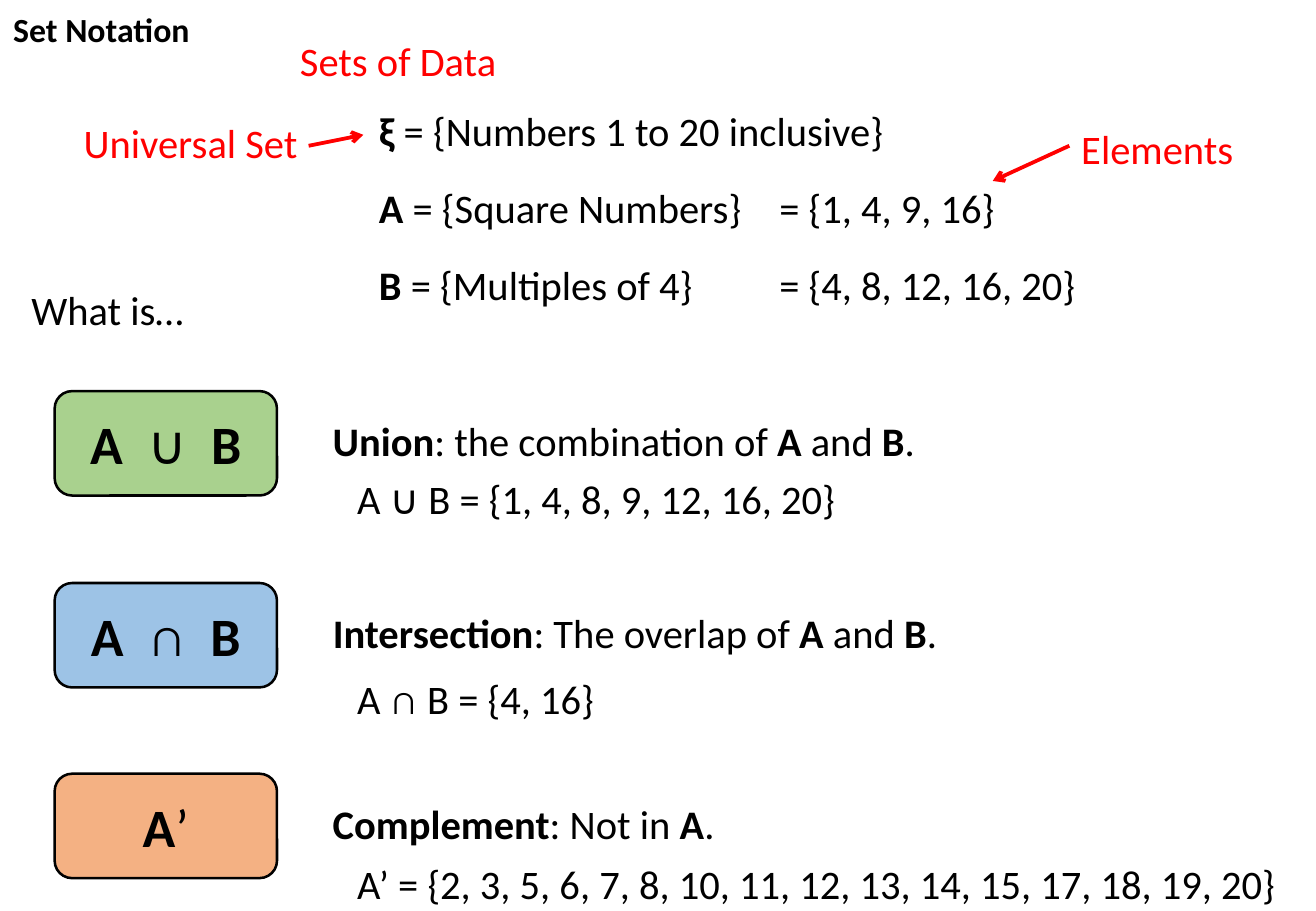
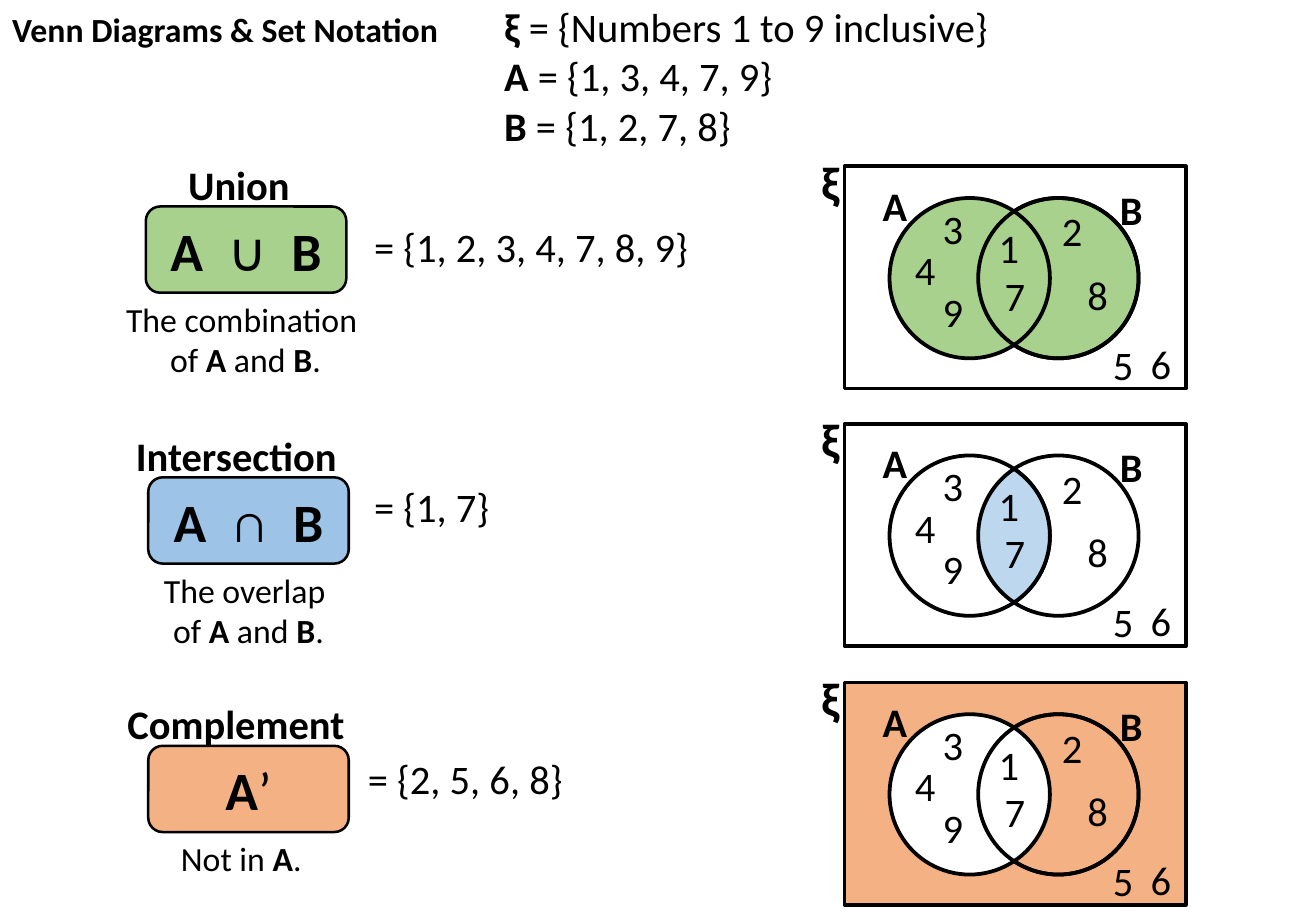
from math import acos, degrees, sqrt

from lxml.etree import SubElement
from pptx import Presentation
from pptx.dml.color import RGBColor
from pptx.enum.shapes import MSO_CONNECTOR, MSO_SHAPE
from pptx.enum.text import MSO_ANCHOR, MSO_AUTO_SIZE, PP_ALIGN
from pptx.oxml.ns import qn
from pptx.util import Inches, Pt

FONT = "Calibri"
COLORS = {
    "text": "000000", "note": "FF0000", "white": "FFFFFF",
    "union": "A9D18E", "intersection": "9DC3E6", "complement": "F4B183",
    "overlap": "BDD7EE",
}

# Content: *stars* enclose bold text
SYMBOLS = {"union": "*A*  ∪  *B*", "intersection": "*A*  ∩  *B*", "complement": "*A*’"}

# Slide 1: (text, left, top, width)
GIVEN_SETS = [
    ("*ξ* = {Numbers 1 to 20 inclusive}", 3.02, 0.82, 4.39),
    ("*A* = {Square Numbers}", 3.02, 1.46, 3.21),
    ("*B* = {Multiples of 4}", 3.02, 2.09, 2.81),
    (" = {1, 4, 9, 16}", 6.24, 1.46, 2.06),
    (" = {4, 8, 12, 16, 20}", 6.24, 2.09, 2.73),
    ("What is…", 0.16, 2.3, 1.47),
]
NOTES = [
    ("Sets of Data", 2.37, 0.25, 1.84),
    ("Universal Set", 0.59, 0.92, 1.98),
    ("Elements", 8.8, 0.97, 1.47),
]
ARROWS = [(2.54, 1.2, 2.99, 1.11), (8.8, 1.2, 8.17, 1.49)]
# (operation, button top, definition and its width, answer with top and width)
DEFINITIONS = [
    ("union", 3.22, "*Union*: the combination of *A* and *B*.", 5.16,
     ("A ∪ B = {1, 4, 8, 9, 12, 16, 20}", 3.85, 5.47)),
    ("intersection", 4.8, "*Intersection*: The overlap of *A* and *B*.", 5.22,
     ("A ∩ B = {4, 16}", 5.5, 5.47)),
    ("complement", 6.37, "*Complement*: Not in *A*.", 3.36,
     ("A’ = {2, 3, 5, 6, 7, 8, 10, 11, 12, 13, 14, 15, 17, 18, 19, 20}", 7.02, 8.08)),
]

# Slide 2: (text, top, width)
VENN_SETS = [
    ("*ξ* = {Numbers 1 to 9 inclusive}", -0.03, 4.22),
    ("*A* = {1, 3, 4, 7, 9}", 0.37, 2.42),
    ("*B* = {1, 2, 7, 8}", 0.78, 2.08),
]
# (operation, button left and top, heading with left and width,
#  caption lines with left, width and alignment, answer with left, top and width)
OPERATIONS = [
    ("union", 1.2, 1.7, ("*Union*", 1.45, 1.14),
     (["The combination ", "of *A* and *B*."], 0.83, 2.38, PP_ALIGN.CENTER),
     ("= {1, 2, 3, 4, 7, 8, 9}", 2.98, 1.78, 3.46)),
    ("intersection", 1.22, 3.93, ("*Intersection*", 1.02, 2.04),
     (["The overlap ", "of *A* and *B*."], 1.17, 1.75, PP_ALIGN.CENTER),
     ("= {1, 7}", 2.98, 3.92, 1.51)),
    ("complement", 1.22, 6.14, ("*Complement*", 0.95, 2.19),
     (["Not in *A*."], 1.39, 1.31, PP_ALIGN.LEFT),
     ("= {2, 5, 6, 8}", 2.93, 6.16, 1.96)),
]
# (top, fill of the box, of circle B, of circle A, of their overlap if it differs from A)
VENNS = [
    (1.37, "white", "union", "union", None),
    (3.49, "white", "white", "white", "overlap"),
    (5.62, "complement", "complement", "white", None),
]
# Offsets from the corner of the diagram's box
ELEMENTS = {
    "1": (1.17, 0.42), "2": (1.69, 0.28), "3": (0.71, 0.26),
    "4": (0.48, 0.6), "5": (2.11, 1.38), "6": (2.42, 1.37),
    "7": (1.22, 0.81), "8": (1.9, 0.8), "9": (0.71, 0.94),
}
VENN_LEFT, VENN_WIDTH, VENN_HEIGHT = 6.95, 2.81, 1.83
CIRCLE_A, CIRCLE_B, CIRCLE_TOP, RADIUS = 0.37, 1.1, 0.26, 0.66


# Shared helpers
def rgb(name):
    return RGBColor.from_string(COLORS[name])


def write(frame, lines, size=24, color="text", align=PP_ALIGN.LEFT,
          anchor=MSO_ANCHOR.TOP, wrap=False, fit=MSO_AUTO_SIZE.SHAPE_TO_FIT_TEXT):
    frame.word_wrap = wrap
    frame.auto_size = fit
    frame.vertical_anchor = anchor
    frame.margin_left = frame.margin_right = Inches(0.1)
    frame.margin_top = frame.margin_bottom = Inches(0.05)
    for number, line in enumerate(lines):
        paragraph = frame.paragraphs[0] if number == 0 else frame.add_paragraph()
        paragraph.alignment = align
        for index, part in enumerate(line.split("*")):
            if part:
                run = paragraph.add_run()
                run.text = part
                run.font.name = FONT
                run.font.size = Pt(size)
                run.font.bold = index % 2 == 1
                run.font.color.rgb = rgb(color)


def add_text(slide, lines, left, top, width, height=0.5, **style):
    box = slide.shapes.add_textbox(Inches(left), Inches(top), Inches(width), Inches(height))
    write(box.text_frame, lines, **style)


def paint(shape, fill, line_width=2.25):
    shape.shadow.inherit = False
    if fill:
        shape.fill.solid()
        shape.fill.fore_color.rgb = rgb(fill)
    else:
        shape.fill.background()
    shape.line.color.rgb = rgb("text")
    shape.line.width = Pt(line_width)


def add_preset(slide, kind, left, top, width, height, fill, line_width=2.25):
    shape = slide.shapes.add_shape(
        kind, Inches(left), Inches(top), Inches(width), Inches(height))
    paint(shape, fill, line_width)
    return shape


def add_button(slide, operation, left, top, width, height):
    button = add_preset(slide, MSO_SHAPE.ROUNDED_RECTANGLE, left, top, width, height,
                        operation, 1.5)
    write(button.text_frame, [SYMBOLS[operation]], size=32, align=PP_ALIGN.CENTER,
          anchor=MSO_ANCHOR.MIDDLE, wrap=True, fit=MSO_AUTO_SIZE.NONE)


def add_arrow(slide, *ends):
    arrow = slide.shapes.add_connector(MSO_CONNECTOR.STRAIGHT, *map(Inches, ends))
    arrow.line.color.rgb = rgb("note")
    arrow.line.width = Pt(2.25)
    SubElement(arrow.line._get_or_add_ln(), qn("a:tailEnd"), type="arrow")
    SubElement(arrow._element.spPr, qn("a:effectLst"))


def add_titled_slide(deck, title_text, width, align):
    slide = deck.slides.add_slide(deck.slide_layouts[5])
    title = slide.shapes.title
    title.left, title.top = Inches(0), Inches(0.02)
    title.width, title.height = Inches(width), Inches(0.44)
    write(title.text_frame, [f"*{title_text}*"], size=20, align=align)
    return slide


# Venn diagram
def add_overlap(slide, left, top, fill):
    half_gap = (CIRCLE_B - CIRCLE_A) / 2
    middle_x = left + CIRCLE_A + half_gap + RADIUS
    middle_y = top + CIRCLE_TOP + RADIUS
    half_width, half_height = RADIUS - half_gap, sqrt(RADIUS ** 2 - half_gap ** 2)
    corners = [(Inches(middle_x + dx), Inches(middle_y + dy)) for dx, dy in (
        (0, -half_height), (half_width, 0), (0, half_height), (-half_width, 0))]
    builder = slide.shapes.build_freeform(*corners[0])
    builder.add_line_segments(corners[1:], close=True)
    lens = builder.convert_to_shape()

    # Round the four straight sides into one arc of each circle
    sides = list(lens._element.iter(qn("a:lnTo")))
    reach = degrees(acos(half_gap / RADIUS))
    for start in (360 - reach, 180 - reach):
        arc = SubElement(sides[0].getparent(), qn("a:arcTo"),
                         wR=str(Inches(RADIUS)), hR=str(Inches(RADIUS)),
                         stAng=str(round(start * 60000)), swAng=str(round(reach * 120000)))
        sides[0].addprevious(arc)
    for side in sides:
        side.getparent().remove(side)
    paint(lens, fill)


def add_venn(slide, top, box_fill, b_fill, a_fill, overlap_fill):
    left = VENN_LEFT

    def add_circle(offset, fill):
        add_preset(slide, MSO_SHAPE.OVAL, left + offset, top + CIRCLE_TOP,
                   2 * RADIUS, 2 * RADIUS, fill)

    add_preset(slide, MSO_SHAPE.RECTANGLE, left, top, VENN_WIDTH, VENN_HEIGHT, box_fill)
    add_circle(CIRCLE_B, b_fill)
    add_circle(CIRCLE_A, a_fill)
    if overlap_fill:
        add_overlap(slide, left, top, overlap_fill)
    else:
        add_circle(CIRCLE_B, None)
    add_text(slide, ["*ξ*"], left - 0.29, top - 0.16, 0.37, 0.57, size=28, wrap=True)
    add_text(slide, ["*A*"], left + 0.07, top + 0.07, 0.69, align=PP_ALIGN.CENTER, wrap=True)
    add_text(slide, ["*B*"], left + 2.08, top + 0.1, 0.56, align=PP_ALIGN.CENTER, wrap=True)
    for element, (dx, dy) in ELEMENTS.items():
        add_text(slide, [element], left + dx, top + dy, 0.37)


# Slides
def build_notation(deck):
    slide = add_titled_slide(deck, "Set Notation", 1.67, PP_ALIGN.CENTER)
    for color, entries in (("text", GIVEN_SETS), ("note", NOTES)):
        for text, left, top, width in entries:
            add_text(slide, [text], left, top, width, color=color)
    for ends in ARROWS:
        add_arrow(slide, *ends)
    for operation, top, definition, width, answer in DEFINITIONS:
        answer_text, answer_top, answer_width = answer
        add_button(slide, operation, 0.45, top, 1.83, 0.86)
        add_text(slide, [definition], 2.64, top + 0.16, width)
        add_text(slide, [answer_text], 2.84, answer_top, answer_width, wrap=True)


def build_venn_diagrams(deck):
    slide = add_titled_slide(deck, "Venn Diagrams & Set Notation", 3.74, PP_ALIGN.LEFT)
    for text, top, width in VENN_SETS:
        add_text(slide, [text], 4.05, top, width)
    for venn in VENNS:
        add_venn(slide, *venn)

    button_height = 0.71
    for operation, left, top, heading, caption, answer in OPERATIONS:
        heading_text, heading_left, heading_width = heading
        lines, caption_left, caption_width, align = caption
        answer_text, answer_left, answer_top, answer_width = answer
        add_button(slide, operation, left, top, 1.65, button_height)
        add_text(slide, lines, caption_left, top + button_height, caption_width,
                 0.11 + 0.33 * len(lines), size=20, align=align)
        add_text(slide, [heading_text], heading_left, top - 0.43, heading_width)
        add_text(slide, [answer_text], answer_left, answer_top, answer_width, wrap=True)


def main():
    deck = Presentation()
    deck.slide_width, deck.slide_height = Inches(10.83), Inches(7.5)
    build_notation(deck)
    build_venn_diagrams(deck)
    deck.save("out.pptx")


if __name__ == "__main__":
    main()
